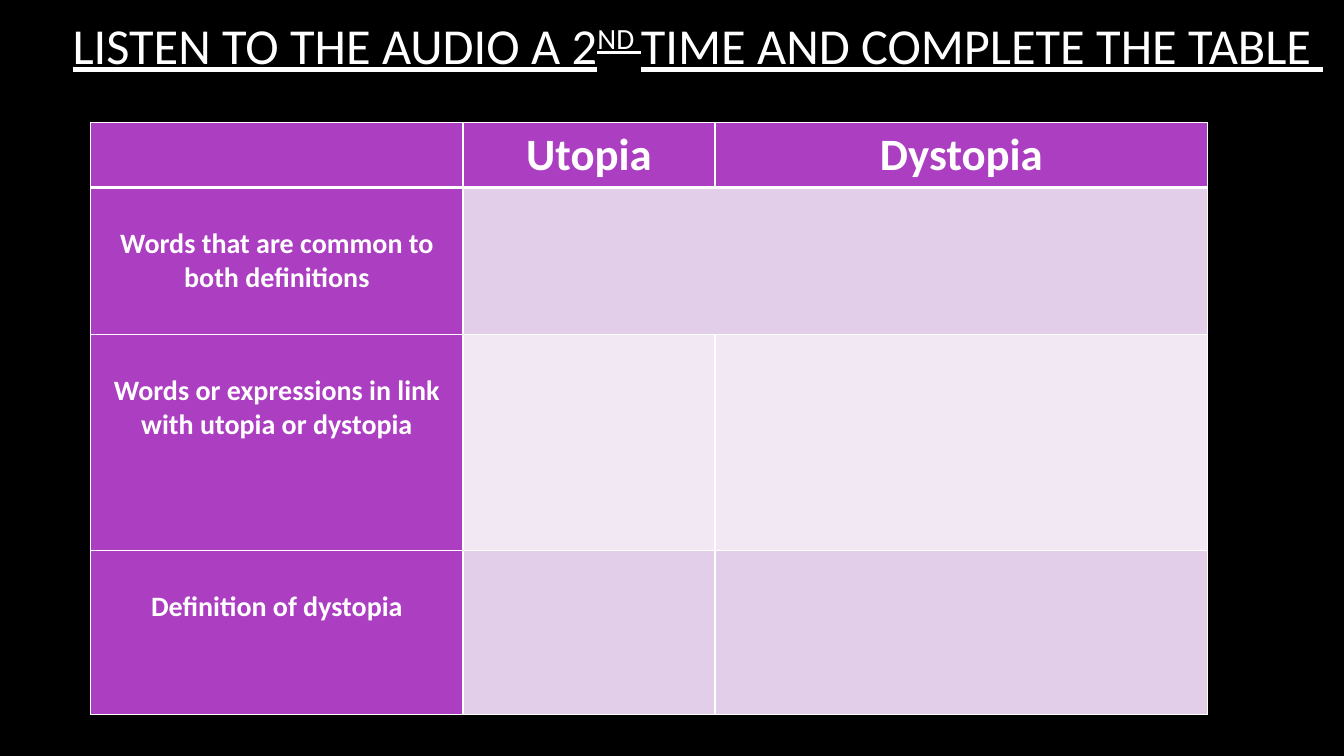
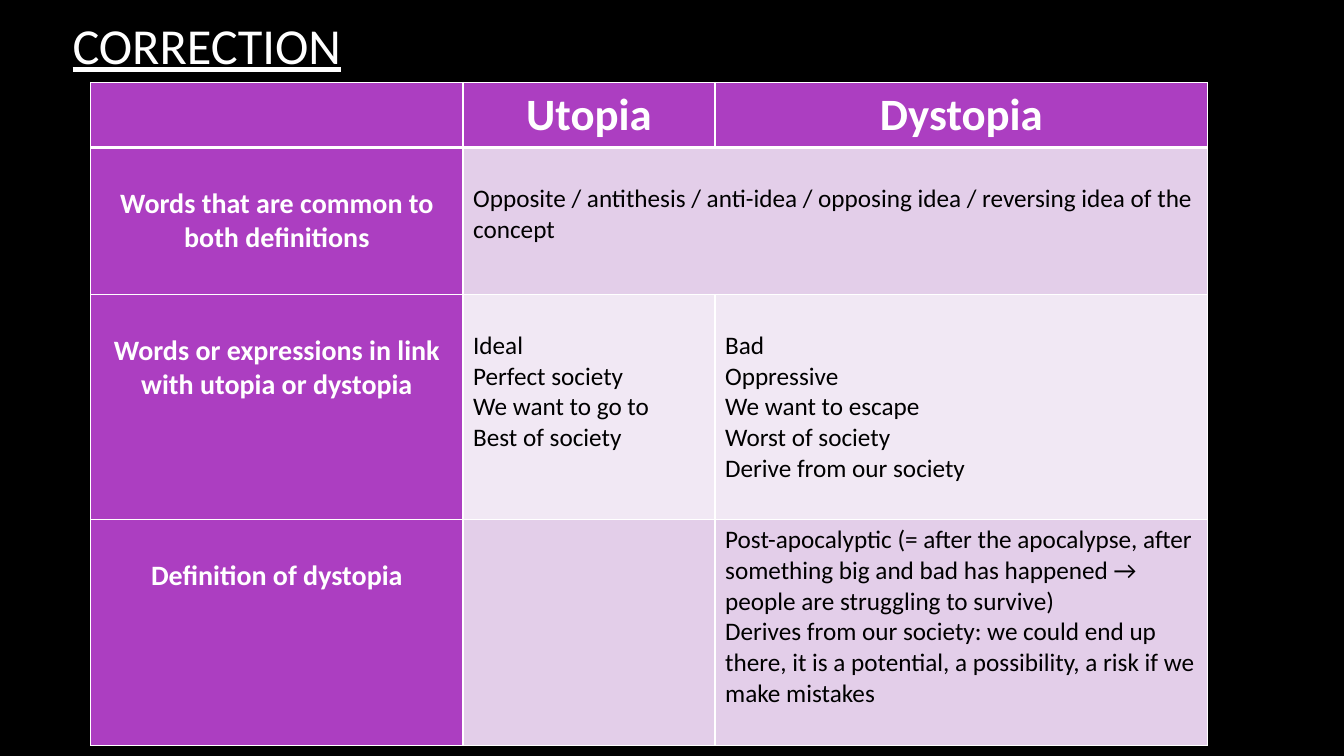
"""Build a two-slide lesson on utopia and dystopia: a table to complete and its correction."""
from lxml import etree
from pptx import Presentation
from pptx.dml.color import RGBColor
from pptx.enum.text import MSO_ANCHOR, MSO_AUTO_SIZE, PP_ALIGN
from pptx.oxml.ns import qn
from pptx.util import Pt

LEFT, CENTER = PP_ALIGN.LEFT, PP_ALIGN.CENTER
MIDDLE, NO_FIT = MSO_ANCHOR.MIDDLE, MSO_AUTO_SIZE.NONE
TITLE_ONLY = 5
FONT = "Calibri"
COLORS = {
    "background": "000000", "light": "FFFFFF", "dark": "000000",
    "purple": "AC3EC1", "lilac": "E3CEE9", "pale": "F1E8F4",
}

HEADINGS = ["", "Utopia", "Dystopia"]
LABELS = [
    "Words that are common to both definitions",
    "Words or expressions in link with utopia or dystopia",
    "Definition of dystopia",
]
BAND_COLORS = ["lilac", "pale", "lilac"]
COMMON_ROW = 1
DEFINITION_ROW = 3

TABLE_LEFT = 64.8
COLUMN_WIDTHS = [266, 180, 352]
CELL_MARGIN = 3.6
LINE_HEIGHT = 1.22

SLIDES = [
    {
        "title": [("LISTEN TO THE AUDIO A 2", 0), ("ND ", 30000),
                  ("TIME AND COMPLETE THE TABLE ", 0)],
        "title_width": 916,
        "top": 87.6,
        "row_heights": [46.4, 105, 154.3, 117.1],
        "answers": {},
    },
    {
        "title": [("CORRECTION", 0)],
        "title_width": 798,
        "top": 59,
        "row_heights": [46.4, 105, 160.7, 161.4],
        "answers": {
            (1, 1): ["Opposite / antithesis / anti-idea / opposing idea / "
                     "reversing idea of the concept"],
            (2, 1): ["Ideal", "Perfect society", "We want to go to", "Best of society"],
            (2, 2): ["Bad", "Oppressive", "We want to escape", "Worst of society",
                     "Derive from our society"],
            (3, 2): ["Post-apocalyptic (= after the apocalypse, after something big and bad "
                     "has happened → people are struggling to survive)",
                     "Derives from our society: we could end up there, it is a potential, "
                     "a possibility, a risk if we make mistakes"],
        },
    },
]


def rgb(name):
    return RGBColor.from_string(COLORS[name])


def write(frame, paragraphs, size, color="light", bold=False, underline=False, align=LEFT):
    """Fill a frame with paragraphs, each a list of (text, baseline) runs."""
    for index, pieces in enumerate(paragraphs):
        paragraph = frame.add_paragraph() if index else frame.paragraphs[0]
        paragraph.alignment = align
        for words, baseline in pieces:
            run = paragraph.add_run()
            run.text = words
            font = run.font
            font.name, font.size = FONT, Pt(size)
            font.bold, font.underline = bold, underline
            font.color.rgb = rgb(color)
            if baseline:
                run._r.get_or_add_rPr().set("baseline", str(baseline))


def style_cell(cell, fill, top=1, bottom=1):
    """Give a cell white borders and a plain fill."""
    properties = cell._tc.get_or_add_tcPr()
    for side, width in (("L", 1), ("R", 1), ("T", top), ("B", bottom)):
        border = etree.SubElement(properties, qn(f"a:ln{side}"), w=str(Pt(width)))
        paint = etree.SubElement(border, qn("a:solidFill"))
        etree.SubElement(paint, qn("a:srgbClr"), val=COLORS["light"])
    cell.fill.solid()
    cell.fill.fore_color.rgb = rgb(fill)


def add_title(slide, pieces, width):
    title = slide.shapes.title
    title.left, title.top, title.width, title.height = Pt(44.6), Pt(-25.4), Pt(width), Pt(114.5)
    frame = title.text_frame
    frame.auto_size, frame.word_wrap, frame.vertical_anchor = NO_FIT, True, MIDDLE
    write(frame, [pieces], size=36, underline=True)


def add_comparison(slide, top, row_heights, answers):
    rows, columns = len(row_heights), len(COLUMN_WIDTHS)
    table = slide.shapes.add_table(rows, columns, Pt(TABLE_LEFT), Pt(top),
                                   Pt(sum(COLUMN_WIDTHS)), Pt(sum(row_heights))).table
    for column, width in zip(table.columns, COLUMN_WIDTHS):
        column.width = Pt(width)
    for row, height in zip(table.rows, row_heights):
        row.height = Pt(height)
    table.cell(COMMON_ROW, 1).merge(table.cell(COMMON_ROW, columns - 1))

    for c, heading in enumerate(HEADINGS):
        cell = table.cell(0, c)
        style_cell(cell, "purple", bottom=3)
        if heading:
            write(cell.text_frame, [[(heading, 0)]], size=32, bold=True, align=CENTER)

    for r, (label, band) in enumerate(zip(LABELS, BAND_COLORS), start=1):
        for c in range(columns):
            cell = table.cell(r, c)
            style_cell(cell, band if c else "purple", top=3 if r == 1 else 1)
            size = 18 if c else 20
            lines = answers.get((r, c), []) if c else [label]
            if lines and (c == 0 or r != DEFINITION_ROW):
                cell.margin_top = Pt(round(CELL_MARGIN + size * LINE_HEIGHT, 1))
            write(cell.text_frame, [[(line, 0)] for line in lines], size=size,
                  color="dark" if c else "light", bold=c == 0, align=LEFT if c else CENTER)


def main():
    deck = Presentation()
    deck.slide_width, deck.slide_height = Pt(960), Pt(540)
    backdrop = deck.slide_master.background.fill
    backdrop.solid()
    backdrop.fore_color.rgb = rgb("background")
    for content in SLIDES:
        slide = deck.slides.add_slide(deck.slide_layouts[TITLE_ONLY])
        add_title(slide, content["title"], content["title_width"])
        add_comparison(slide, content["top"], content["row_heights"], content["answers"])
    deck.save("out.pptx")


if __name__ == "__main__":
    main()
